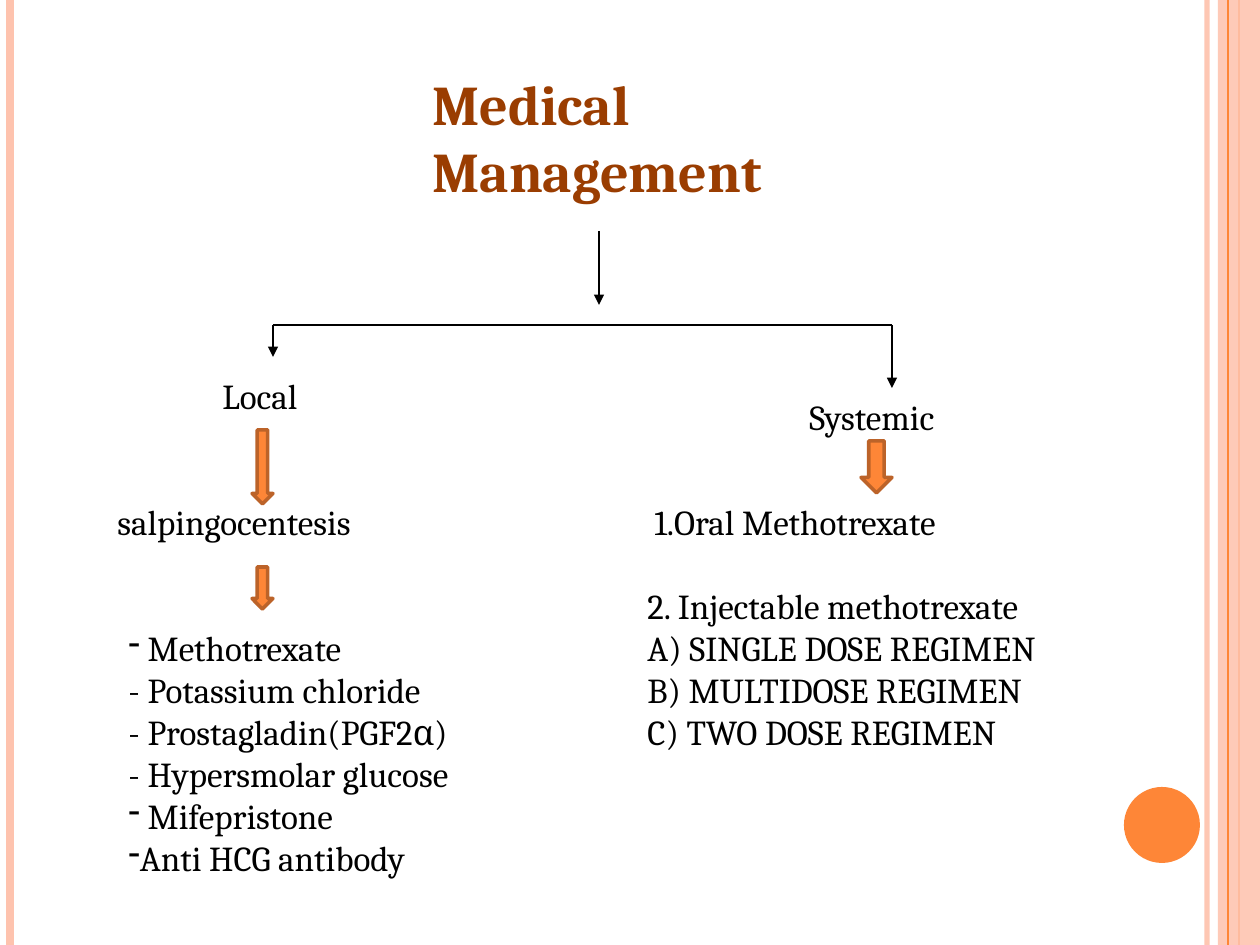
from pptx import Presentation
from pptx.dml.color import RGBColor
from pptx.enum.shapes import MSO_CONNECTOR, MSO_SHAPE
from pptx.oxml.ns import qn
from pptx.util import Pt
from lxml import etree

STRAIGHT = MSO_CONNECTOR.STRAIGHT
RECTANGLE = MSO_SHAPE.RECTANGLE
OVAL = MSO_SHAPE.OVAL
DOWN_ARROW = MSO_SHAPE.DOWN_ARROW

EMU_PER_PX = 914400 / 126
WIDTH, HEIGHT = 1260, 945
COLORS = {
    "peach": "FEC3AE",
    "orange": "FE8637",
    "rust": "BC6329",
    "title": "9A3D01",
    "black": "000000",
}
BODY = {"name": "Cambria", "size": Pt(20)}
HEADING = {"name": "Cambria", "size": Pt(32), "bold": True}
BLANK_LINE = Pt(24)

AGENTS = [
    (" Methotrexate", {"bullet": "-"}),
    ("- Potassium chloride", {}),
    ("- Prostagladin(PGF2α)", {}),
    ("- Hypersmolar glucose", {}),
    (" Mifepristone", {"bullet": "-"}),
    ("Anti HCG antibody", {"bullet": "-"}),
]
REGIMENS = [
    ("1.Oral Methotrexate", {"indent": 22}),
    ("2. Injectable methotrexate", {"indent": 15, "before": BLANK_LINE}),
    ("A) SINGLE DOSE REGIMEN", {"indent": 15}),
    ("B) MULTIDOSE REGIMEN", {"indent": 15}),
    ("C) TWO DOSE REGIMEN", {"indent": 15}),
]


def px(length):
    return round(length * EMU_PER_PX)


def rgb(color):
    return RGBColor.from_string(COLORS[color])


def set_alpha(fill, percent):
    color = fill._xPr.find(qn("a:solidFill"))[0]
    etree.SubElement(color, qn("a:alpha"), val=str(percent * 1000))


def add_line(slide, start, end, color="black", width=0.75, arrow=False, alpha=None):
    line = slide.shapes.add_connector(STRAIGHT, *map(px, start + end))
    line.line.color.rgb = rgb(color)
    line.line.width = Pt(width)
    if alpha:
        set_alpha(line.line.fill, alpha)
    if arrow:
        outline = line.line._get_or_add_ln()
        etree.SubElement(outline, qn("a:tailEnd"), type="triangle")
    etree.SubElement(line._element.spPr, qn("a:effectLst"))


def add_figure(slide, kind, box, fill, outline=None, alpha=None):
    figure = slide.shapes.add_shape(kind, *map(px, box))
    figure.shadow.inherit = False
    figure.fill.solid()
    figure.fill.fore_color.rgb = rgb(fill)
    if alpha:
        set_alpha(figure.fill, alpha)
    if outline:
        figure.line.color.rgb = rgb(outline)
        figure.line.width = Pt(2)
    else:
        figure.line.fill.background()


def add_text(slide, box, entries, font=BODY, color="black", wrap=True):
    frame = slide.shapes.add_textbox(*map(px, box)).text_frame
    frame.word_wrap = wrap
    for index, (text, layout) in enumerate(entries):
        paragraph = frame.paragraphs[0] if index == 0 else frame.add_paragraph()
        run = paragraph.add_run()
        run.text = text
        for attribute, value in font.items():
            setattr(run.font, attribute, value)
        run.font.color.rgb = rgb(color)
        if "before" in layout:
            paragraph.space_before = layout["before"]
        properties = paragraph._p.get_or_add_pPr()
        properties.set("marL", str(px(layout.get("indent", 0))))
        properties.set("indent", "0")
        if "bullet" in layout:
            etree.SubElement(properties, qn("a:buChar"), char=layout["bullet"])


def add_frame(slide):
    def add_stripe(x, color, width, alpha=None):
        add_line(slide, (x, 0), (x, HEIGHT), color, width, alpha=alpha)

    add_stripe(1207, "peach", 3, 93)
    add_stripe(10, "peach", 4.5)
    add_stripe(1239, "orange", 1.5)
    add_figure(slide, RECTANGLE, (1218, 0, 42, HEIGHT), "peach", alpha=87)
    add_stripe(1228, "orange", 0.75)
    add_figure(slide, OVAL, (1124, 787, 76, 76), "orange")


def add_branches(slide):
    root_x, local_x, systemic_x, fork_y = 599, 273, 892, 325
    add_line(slide, (root_x, 231), (root_x, 305), arrow=True)
    add_line(slide, (local_x, fork_y), (root_x, fork_y))
    add_line(slide, (root_x, fork_y), (systemic_x, fork_y))
    add_line(slide, (local_x, fork_y), (local_x, 357), arrow=True)
    add_line(slide, (systemic_x, fork_y), (systemic_x, 388), arrow=True)


def main():
    presentation = Presentation()
    presentation.slide_width = px(WIDTH)
    presentation.slide_height = px(HEIGHT)
    slide = presentation.slides.add_slide(presentation.slide_layouts[6])

    add_frame(slide)
    add_text(slide, (420, 63, 472, 149), [("Medical", {}), ("Management", {})],
             HEADING, "title")
    add_branches(slide)
    add_text(slide, (210, 368, 115, 55), [("Local", {})], wrap=False)
    add_text(slide, (797, 389, 173, 55), [("Systemic", {})], wrap=False)
    add_text(slide, (105, 494, 294, 55), [("salpingocentesis", {})])
    add_text(slide, (116, 620, 393, 310), AGENTS)
    add_text(slide, (620, 494, 538, 267), REGIMENS)
    for box in [(252, 430, 21, 74), (252, 567, 21, 42), (861, 441, 31, 52)]:
        add_figure(slide, DOWN_ARROW, box, "orange", "rust")

    presentation.save("out.pptx")


if __name__ == "__main__":
    main()
